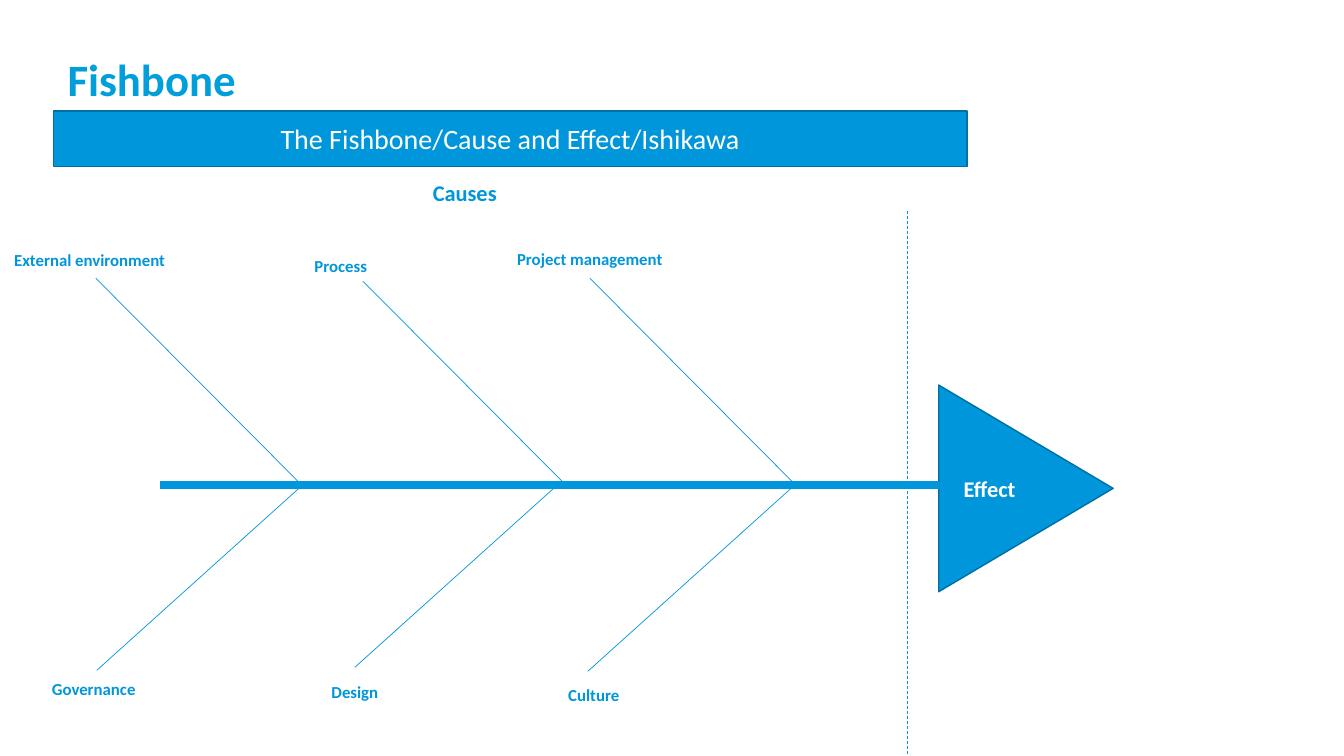
from dataclasses import dataclass

from lxml import etree
from pptx import Presentation
from pptx.dml.color import RGBColor
from pptx.enum.dml import MSO_LINE
from pptx.enum.shapes import MSO_CONNECTOR, MSO_SHAPE
from pptx.enum.text import MSO_ANCHOR, MSO_AUTO_SIZE, PP_ALIGN
from pptx.oxml.ns import qn
from pptx.shapes.autoshape import Shape
from pptx.shapes.connector import Connector
from pptx.slide import Slide
from pptx.util import Inches, Pt

STRAIGHT = MSO_CONNECTOR.STRAIGHT
RECTANGLE, TRIANGLE = MSO_SHAPE.RECTANGLE, MSO_SHAPE.ISOSCELES_TRIANGLE
LEFT, CENTER = PP_ALIGN.LEFT, PP_ALIGN.CENTER
MIDDLE = MSO_ANCHOR.MIDDLE
NO_FIT, GROW = MSO_AUTO_SIZE.NONE, MSO_AUTO_SIZE.SHAPE_TO_FIT_TEXT
DASH = MSO_LINE.DASH

TITLE_BLUE = RGBColor(0x00, 0x9E, 0xDB)
BLUE = RGBColor(0x00, 0x96, 0xDB)
DARK_BLUE = RGBColor(0x00, 0x6F, 0xA2)
WHITE = RGBColor(0xFF, 0xFF, 0xFF)

FONT = "Calibri"
LABEL_WIDTH = 2.86
SPINE_Y = 4.81
UPPER_BONE = (-2.04, -2.05)
LOWER_BONE = (-2.01, 1.81)


@dataclass
class Cause:
    text: str
    label: tuple[float, float]
    joint: tuple[float, float]
    bone: tuple[float, float]


CAUSES = [
    Cause("Project management", (4.42, 2.42), (7.89, 4.81), UPPER_BONE),
    Cause("Process", (1.95, 2.49), (5.64, 4.84), UPPER_BONE),
    Cause("External environment", (-0.54, 2.43), (2.99, 4.81), UPPER_BONE),
    Cause("Culture", (4.46, 6.74), (7.84, 4.85), LOWER_BONE),
    Cause("Design", (2.09, 6.71), (5.53, 4.81), LOWER_BONE),
    Cause("Governance", (-0.5, 6.68), (2.97, 4.84), LOWER_BONE),
]


def write(sp: Shape, text: str, size: int, color: RGBColor,
          bold: bool = True, align: PP_ALIGN = CENTER) -> None:
    tf = sp.text_frame
    tf.word_wrap = True
    p = tf.paragraphs[0]
    p.alignment = align
    r = p.add_run()
    r.text = text
    font_format = {"name": FONT, "size": Pt(size), "bold": bold}
    for name, value in font_format.items():
        setattr(r.font, name, value)
    r.font.color.rgb = color


def add_title(s: Slide, text: str) -> None:
    sp = s.shapes.title
    place = {"left": 0.57, "top": 0.59, "width": 8.09, "height": 0.44}
    for name, value in place.items():
        setattr(sp, name, Inches(value))
    write(sp, text, 32, TITLE_BLUE, align=LEFT)
    tf = sp.text_frame
    tf.auto_size = NO_FIT
    tf.vertical_anchor = MIDDLE
    tf.paragraphs[0].line_spacing = 0.9


def add_block(s: Slide, kind: MSO_SHAPE, left: float, top: float,
              width: float, height: float) -> Shape:
    sp = s.shapes.add_shape(kind, Inches(left), Inches(top),
                            Inches(width), Inches(height))
    sp.shadow.inherit = False
    sp.fill.solid()
    sp.fill.fore_color.rgb = BLUE
    sp.line.color.rgb = DARK_BLUE
    sp.line.width = Pt(1)
    return sp


def add_label(s: Slide, text: str, left: float, top: float, size: int = 12,
              width: float = LABEL_WIDTH, height: float = 0.3,
              color: RGBColor = BLUE, align: PP_ALIGN = CENTER) -> None:
    sp = s.shapes.add_textbox(Inches(left), Inches(top),
                              Inches(width), Inches(height))
    write(sp, text, size, color, align=align)
    sp.text_frame.auto_size = GROW


def add_line(s: Slide, x1: float, y1: float, x2: float, y2: float,
             width: float = 0.5) -> Connector:
    line = s.shapes.add_connector(STRAIGHT, Inches(x1), Inches(y1),
                                  Inches(x2), Inches(y2))
    line.line.color.rgb = BLUE
    line.line.width = Pt(width)
    sp_pr = line._element.find(qn("p:spPr"))
    etree.SubElement(sp_pr, qn("a:effectLst"))
    return line


def main() -> None:
    prs = Presentation()
    prs.slide_width, prs.slide_height = Inches(13.33), Inches(7.5)
    s = prs.slides.add_slide(prs.slide_layouts[5])

    add_title(s, "Fishbone")
    banner = add_block(s, RECTANGLE, 0.53, 1.1, 9.06, 0.55)
    write(banner, "The Fishbone/Cause and Effect/Ishikawa", 20, WHITE, bold=False)
    banner.text_frame.vertical_anchor = MIDDLE

    head = add_block(s, TRIANGLE, 9.15, 3.98, 2.05, 1.73)
    head.rotation = 90
    add_line(s, 1.59, SPINE_Y, 9.31, SPINE_Y, width=6)
    add_label(s, "Effect", 9.46, 4.66, 16, 1.02, 0.37, WHITE, LEFT)
    add_label(s, "Causes", 3.18, 1.73, 16, height=0.37)
    divider = add_line(s, 9, 2.09, 9, 7.6)
    divider.line.dash_style = DASH

    for cause in CAUSES:
        (x, y), (dx, dy) = cause.joint, cause.bone
        add_line(s, x, y, x + dx, y + dy)
        add_label(s, cause.text, *cause.label)

    prs.save("out.pptx")


if __name__ == "__main__":
    main()
